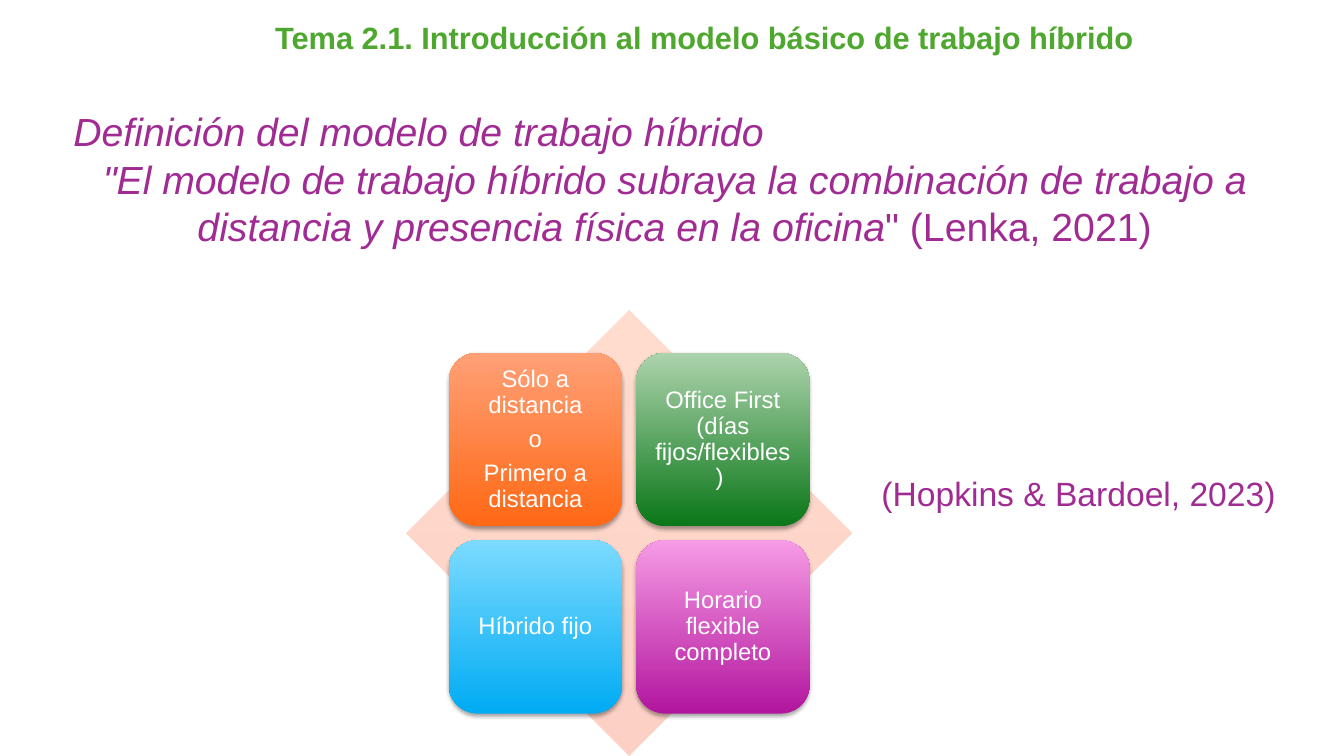
from dataclasses import dataclass

import lxml.etree
import pptx
import pptx.dml.color
import pptx.enum.shapes
import pptx.enum.text
import pptx.oxml.ns
import pptx.util

PX = 9144
FONT = "Arial"
COLORS = {
    "title": "4EA72E",
    "body": "A02B93",
    "white": "FFFFFF",
    "shadow": "000000",
    "diamond_bottom": "FCD0C5",
    "diamond_top": "FFDCCE",
}
SHAPES = pptx.enum.shapes.MSO_SHAPE
ALIGN = pptx.enum.text.PP_ALIGN
ANCHOR = pptx.enum.text.MSO_ANCHOR

TILE_LEFT, TILE_TOP, TILE_SIZE, TILE_PITCH = 445, 350, 172, 186
TILE_INSET = 7


@dataclass(frozen=True)
class Box:
    left: int
    top: int
    width: int
    height: int

    def emu(self) -> list[int]:
        return [length * PX for length in (self.left, self.top, self.width, self.height)]


@dataclass(frozen=True)
class Tile:
    lines: tuple[str, ...]
    bottom: str
    top: str


TILES = (
    Tile(("Sólo a distancia", "o", "Primero a distancia"), "FF6815", "FFA076"),
    Tile(("Office First (días fijos/flexibles) ",), "0A7718", "ADD3AD"),
    Tile(("Híbrido fijo",), "00ABF3", "7CDBFF"),
    Tile(("Horario flexible completo",), "B2159E", "F69BE5"),
)


def rgb(value: str) -> pptx.dml.color.RGBColor:
    return pptx.dml.color.RGBColor.from_string(value)


def style(paragraph, size: int, color: str, align, spacing: float = 0.9) -> None:
    paragraph.alignment = align
    paragraph.line_spacing = spacing
    paragraph.font.name = FONT
    paragraph.font.size = pptx.util.Pt(size)
    paragraph.font.color.rgb = rgb(color)


def add_text_frame(slide, box: Box):
    frame = slide.shapes.add_textbox(*box.emu()).text_frame
    frame.word_wrap = True
    return frame


def add_gradient_shape(slide, kind, box: Box, bottom: str, top: str):
    shape = slide.shapes.add_shape(kind, *box.emu())
    shape.shadow.inherit = False
    shape.line.fill.background()
    shape.fill.gradient()
    shape.fill.gradient_angle = 90
    for stop, color in zip(shape.fill.gradient_stops, (bottom, top)):
        stop.color.rgb = rgb(color)
    return shape


def add_soft_shadow(shape) -> None:
    qn = pptx.oxml.ns.qn
    effects = shape.element.spPr.find(qn("a:effectLst"))
    shadow = lxml.etree.SubElement(
        effects,
        qn("a:outerShdw"),
        blurRad=str(pptx.util.Pt(3.1)),
        dist=str(pptx.util.Pt(1.8)),
        dir="5400000",
        rotWithShape="0",
    )
    color = lxml.etree.SubElement(shadow, qn("a:srgbClr"), val=COLORS["shadow"])
    lxml.etree.SubElement(color, qn("a:alpha"), val="35000")


def add_tile(slide, index: int, tile: Tile) -> None:
    row, column = divmod(index, 2)
    box = Box(
        TILE_LEFT + column * TILE_PITCH,
        TILE_TOP + row * TILE_PITCH,
        TILE_SIZE,
        TILE_SIZE,
    )
    shape = add_gradient_shape(
        slide, SHAPES.ROUNDED_RECTANGLE, box, tile.bottom, tile.top
    )
    add_soft_shadow(shape)
    frame = shape.text_frame
    frame.word_wrap = True
    frame.vertical_anchor = ANCHOR.MIDDLE
    frame.margin_left = frame.margin_right = TILE_INSET * PX
    frame.margin_top = frame.margin_bottom = TILE_INSET * PX
    frame.text = "\n".join(tile.lines)
    for position, paragraph in enumerate(frame.paragraphs):
        style(paragraph, 17, COLORS["white"], ALIGN.CENTER)
        if position:
            paragraph.space_before = pptx.util.Pt(6)


def add_texts(slide) -> None:
    title = add_text_frame(slide, Box(263, 18, 1012, 42)).paragraphs[0]
    title.text = "Tema 2.1. Introducción al modelo básico de trabajo híbrido"
    style(title, 22, COLORS["title"], ALIGN.LEFT)
    title.font.bold = True

    definition = add_text_frame(slide, Box(63, 102, 1212, 144))
    heading = definition.paragraphs[0]
    heading.text = "Definición del modelo de trabajo híbrido"
    style(heading, 28, COLORS["body"], ALIGN.LEFT, 1.0)
    heading.font.italic = True
    quote = definition.add_paragraph()
    style(quote, 28, COLORS["body"], ALIGN.CENTER, 1.0)
    quoted = quote.add_run()
    quoted.text = (
        '"El modelo de trabajo híbrido subraya la combinación de trabajo a '
        "distancia y presencia física en la oficina"
    )
    quoted.font.italic = True
    quote.add_run().text = '" (Lenka, 2021)'

    citation = add_text_frame(slide, Box(855, 469, 420, 45)).paragraphs[0]
    citation.text = "(Hopkins & Bardoel, 2023)"
    style(citation, 24, COLORS["body"], ALIGN.RIGHT)


def main() -> None:
    presentation = pptx.Presentation()
    presentation.slide_width = 1333 * PX
    presentation.slide_height = 750 * PX
    slide = presentation.slides.add_slide(presentation.slide_layouts[6])
    add_texts(slide)
    add_gradient_shape(
        slide,
        SHAPES.DIAMOND,
        Box(403, 308, 442, 442),
        COLORS["diamond_bottom"],
        COLORS["diamond_top"],
    )
    for index, tile in enumerate(TILES):
        add_tile(slide, index, tile)
    presentation.save("out.pptx")


if __name__ == "__main__":
    main()
